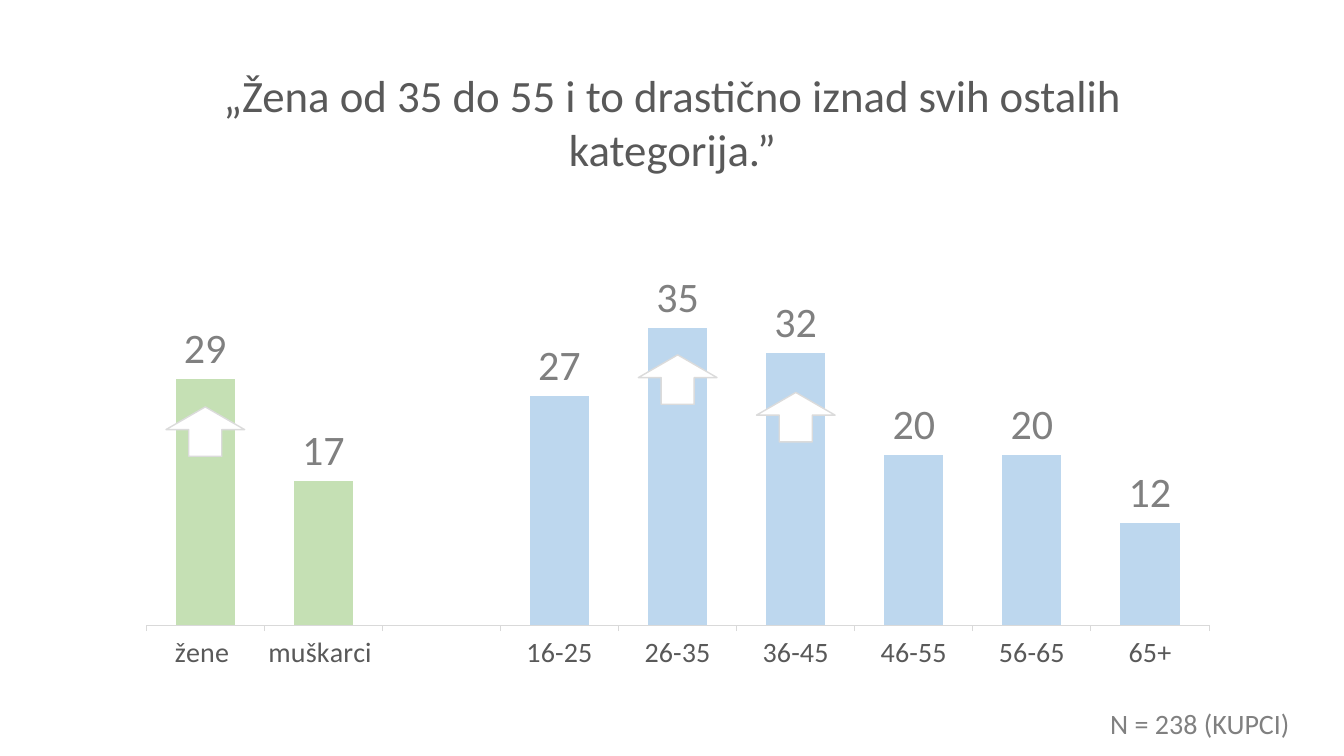
from lxml import etree
from pptx import Presentation
from pptx.chart.data import CategoryChartData
from pptx.dml.color import RGBColor
from pptx.enum.chart import XL_CHART_TYPE as ChartType, XL_LABEL_POSITION as LabelPos
from pptx.enum.chart import XL_TICK_MARK as TickMark
from pptx.enum.shapes import MSO_SHAPE as Shape
from pptx.enum.text import MSO_AUTO_SIZE as AutoSize, PP_ALIGN as Align
from pptx.oxml.ns import qn
from pptx.util import Inches, Pt

TITLE = "„Žena od 35 do 55 i to drastično iznad svih ostalih kategorija.”"
SAMPLE = "N = 238 (KUPCI)"
BUYERS = [
    ("žene ", 29), ("muškarci ", 17), ("", None),
    ("16-25", 27), ("26-35", 35), ("36-45", 32),
    ("46-55", 20), ("56-65", 20), ("65+", 12),
]
GENDER_COLUMNS = 2
ARROW_DROPS = {4: 0.27, 5: 0.39, 0: 0.28}  # column: inches below the bar top

FONT = "Calibri"
DARK, GREY, AXIS, OUTLINE = "595959", "808080", "D9D9D9", "DBDBDB"
BLUE, GREEN, WHITE = "BDD7EE", "C5E0B4", "FFFFFF"

SLIDE_W, SLIDE_H = 13.33, 7.5
CHART_X, CHART_Y, CHART_W, CHART_H = 1.13, 2.28, 11.05, 4.61
PLOT = {"x": 0.029, "y": 0.119, "w": 0.954, "h": 0.732}  # shares of the chart
SCALE_MAX = 40
ARROW_W, ARROW_H = 0.78, 0.49


def rgb(hex_colour):
    return RGBColor.from_string(hex_colour)


def style(font, size, colour):
    font.name, font.size, font.color.rgb = FONT, Pt(size), rgb(colour)


def paint(part, colour):
    part.fill.solid()
    part.fill.fore_color.rgb = rgb(colour)


def add_text(slide, box, text, size, colour, align):
    frame = slide.shapes.add_textbox(*map(Inches, box)).text_frame
    frame.word_wrap = True
    frame.auto_size = AutoSize.SHAPE_TO_FIT_TEXT
    paragraph = frame.paragraphs[0]
    paragraph.alignment = align
    run = paragraph.add_run()
    run.text = text
    style(run.font, size, colour)


def fix_plot_area(chart):
    """Pin the inner plot area to the shares in PLOT."""
    area = chart.plots[0]._element.getparent()
    for old in area.findall(qn("c:layout")):
        area.remove(old)
    layout = etree.Element(qn("c:layout"))
    manual = etree.SubElement(layout, qn("c:manualLayout"))
    settings = [("layoutTarget", "inner"), ("xMode", "edge"), ("yMode", "edge")]
    for tag, value in settings + list(PLOT.items()):
        etree.SubElement(manual, qn(f"c:{tag}")).set("val", str(value))
    area.insert(0, layout)


def add_buyer_chart(slide):
    data = CategoryChartData()
    data.categories = [group for group, _ in BUYERS]
    data.add_series("Series 1", [share for _, share in BUYERS])
    box = map(Inches, (CHART_X, CHART_Y, CHART_W, CHART_H))
    chart = slide.shapes.add_chart(ChartType.COLUMN_CLUSTERED, *box, data).chart
    style(chart.font, 10, "000000")
    chart.has_legend = chart.has_title = False

    groups = chart.category_axis
    groups.major_tick_mark = TickMark.OUTSIDE
    groups.format.line.color.rgb = rgb(AXIS)
    groups.format.line.width = Pt(0.75)
    style(groups.tick_labels.font, 20, DARK)
    scale = chart.value_axis
    scale.minimum_scale, scale.maximum_scale = 0, SCALE_MAX
    scale.has_major_gridlines = scale.visible = False

    plot = chart.plots[0]
    plot.gap_width, plot.overlap, plot.vary_by_categories = 100, -27, False
    bars = plot.series[0]
    paint(bars.format, BLUE)
    for column in range(GENDER_COLUMNS):
        paint(bars.points[column].format, GREEN)
    labels = bars.data_labels
    labels.show_value = True
    labels.position = LabelPos.OUTSIDE_END
    style(labels.font, 30, GREY)
    fix_plot_area(chart)


def add_arrow(slide, column, drop):
    column_w = CHART_W * PLOT["w"] / len(BUYERS)
    centre = CHART_X + CHART_W * PLOT["x"] + (column + 0.5) * column_w
    empty_share = 1 - BUYERS[column][1] / SCALE_MAX
    bar_top = CHART_Y + CHART_H * (PLOT["y"] + PLOT["h"] * empty_share)
    box = map(Inches, (centre - ARROW_W / 2, bar_top + drop, ARROW_W, ARROW_H))
    arrow = slide.shapes.add_shape(Shape.UP_ARROW, *box)
    arrow.adjustments[0], arrow.adjustments[1] = 0.42, 0.46
    arrow.shadow.inherit = False
    paint(arrow, WHITE)
    arrow.line.color.rgb = rgb(OUTLINE)
    arrow.line.width = Pt(1)


def main():
    deck = Presentation()
    deck.slide_width, deck.slide_height = Inches(SLIDE_W), Inches(SLIDE_H)
    slide = deck.slides.add_slide(deck.slide_layouts[6])
    add_buyer_chart(slide)
    add_text(slide, (1.16, 0.62, 11.02, 1.18), TITLE, 32, DARK, Align.CENTER)
    for column, drop in ARROW_DROPS.items():
        add_arrow(slide, column, drop)
    add_text(slide, (10.87, 6.96, 2.02, 0.44), SAMPLE, 20, GREY, Align.RIGHT)
    deck.save("out.pptx")


if __name__ == "__main__":
    main()
